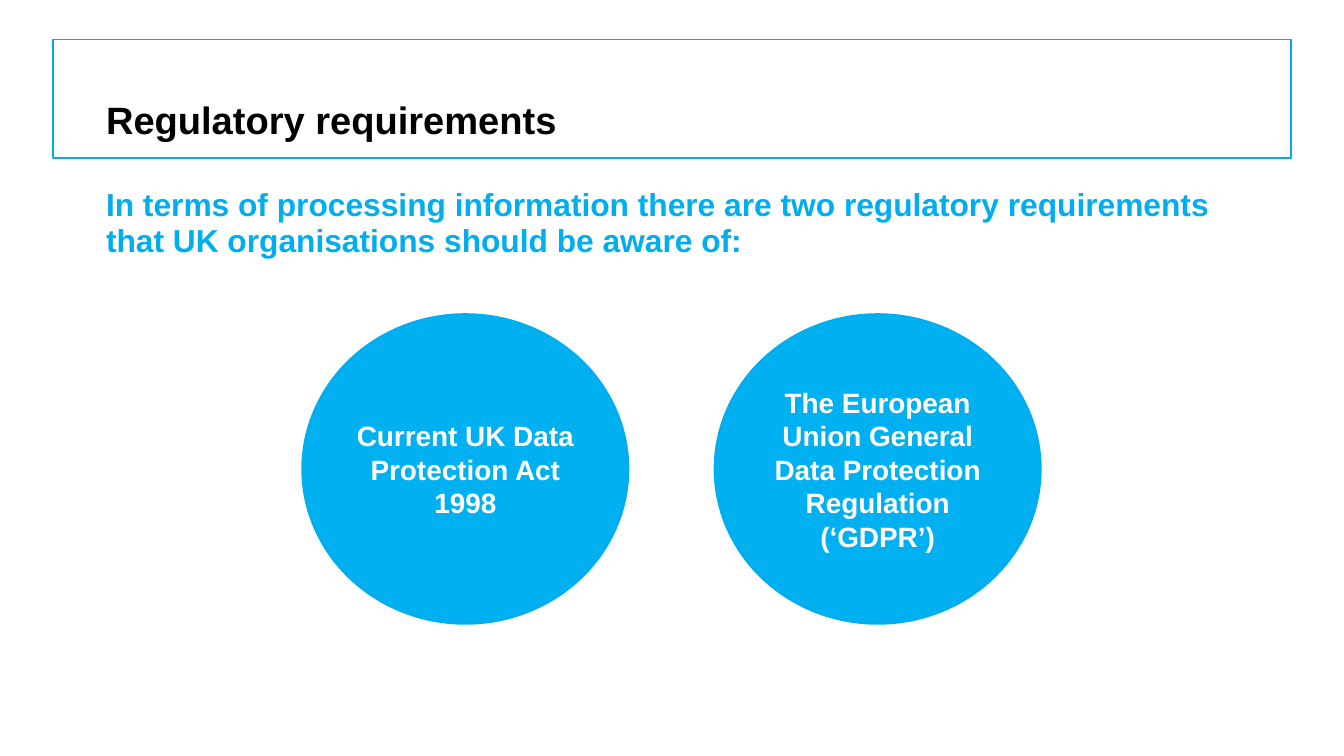
"""Builds the slide on UK regulatory requirements for processing information."""
import pptx
import pptx.dml.color
import pptx.enum.shapes
import pptx.enum.text
import pptx.util
from pptx.util import Inches

COLOURS = {"frame": "00AEEF", "circle": "00B0F0", "title": "000000", "white": "FFFFFF"}
REQUIREMENTS = [
    "Current UK Data Protection Act 1998",
    "The European Union General Data Protection Regulation (‘GDPR’)",
]
SHAPES = pptx.enum.shapes.MSO_SHAPE
ALIGN = pptx.enum.text.PP_ALIGN
ANCHOR = pptx.enum.text.MSO_ANCHOR


def colour(name):
    return pptx.dml.color.RGBColor.from_string(COLOURS[name])


def write_text(shape, text, size, color, align=ALIGN.LEFT, anchor=ANCHOR.TOP, spacing=1.0):
    frame = shape.text_frame
    frame.word_wrap = True
    frame.auto_size = pptx.enum.text.MSO_AUTO_SIZE.NONE
    frame.vertical_anchor = anchor
    frame.margin_left = frame.margin_right = frame.margin_top = frame.margin_bottom = 0
    frame.text = text
    paragraph = frame.paragraphs[0]
    properties = paragraph._p.get_or_add_pPr()
    properties.set("marL", "0")
    properties.set("indent", "0")
    properties.append(pptx.oxml.xmlchemy.OxmlElement("a:buNone"))
    paragraph.alignment = align
    paragraph.line_spacing = spacing
    paragraph.space_before = pptx.util.Pt(0)
    font = paragraph.runs[0].font
    font.name = "Arial"
    font.size = pptx.util.Pt(size)
    font.bold = True
    font.color.rgb = colour(color)


def place(shape, left, top, width, height):
    shape.left, shape.top = Inches(left), Inches(top)
    shape.width, shape.height = Inches(width), Inches(height)


def add_outlined(slide, kind, left, top, width, height, line_width, fill=None):
    shape = slide.shapes.add_shape(
        kind, Inches(left), Inches(top), Inches(width), Inches(height)
    )
    shape.shadow.inherit = False
    if fill:
        shape.fill.solid()
        shape.fill.fore_color.rgb = colour(fill)
    else:
        shape.fill.background()
    shape.line.color.rgb = colour("frame")
    shape.line.width = pptx.util.Pt(line_width)
    return shape


def main():
    presentation = pptx.Presentation()
    presentation.slide_width = Inches(14.7)
    presentation.slide_height = Inches(8.27)
    slide = presentation.slides.add_slide(presentation.slide_layouts[1])

    add_outlined(slide, SHAPES.RECTANGLE, 0.58, 0.43, 13.54, 1.3, line_width=1)
    title, body = slide.shapes.title, slide.placeholders[1]
    place(title, 1.16, 0.43, 10.47, 1.13)
    write_text(title, "Regulatory requirements", size=30, color="title", anchor=ANCHOR.BOTTOM)
    place(body, 1.16, 2.05, 12.38, 5.34)
    write_text(
        body,
        "In terms of processing information there are two regulatory requirements "
        "that UK organisations should be aware of:",
        size=25, color="frame", spacing=0.95,
    )

    for index, requirement in enumerate(REQUIREMENTS):
        circle = add_outlined(
            slide, SHAPES.OVAL, 3.31 + 4.51 * index, 3.44, 3.56, 3.38,
            line_width=2, fill="circle",
        )
        write_text(
            circle, requirement, size=22, color="white",
            align=ALIGN.CENTER, anchor=ANCHOR.MIDDLE,
        )

    presentation.save("out.pptx")


if __name__ == "__main__":
    main()
